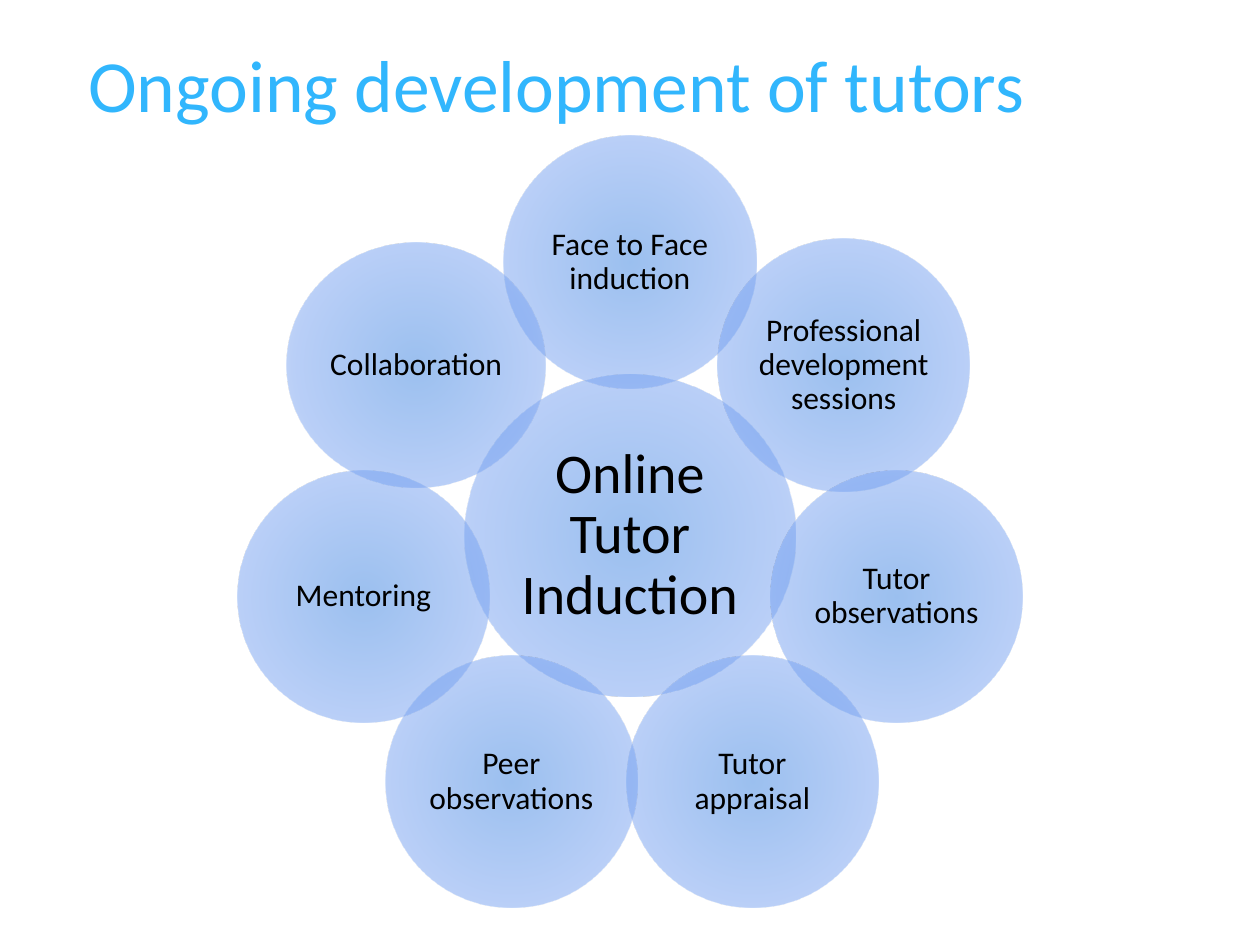
from math import cos, radians, sin

from pptx import Presentation
from pptx.dml.color import RGBColor
from pptx.enum.shapes import MSO_SHAPE
from pptx.enum.text import MSO_ANCHOR, PP_ALIGN
from pptx.oxml import parse_xml
from pptx.oxml.ns import nsdecls
from pptx.util import Inches, Pt

OVAL = MSO_SHAPE.OVAL
LEFT, CENTER = PP_ALIGN.LEFT, PP_ALIGN.CENTER
BOTTOM, MIDDLE = MSO_ANCHOR.BOTTOM, MSO_ANCHOR.MIDDLE

FONT = "Calibri"
GRADIENT = [(0, "3782E1"), (69, "74A1F2"), (100, "B6CAF5")]
OPACITY = 50

HUB_X, HUB_Y = 5, 4.25
RING_RADIUS = 2.17
PETAL_SIZE = (2, 2)
# Clockwise from the top: text, size, sideways shift
PETALS = [
    ("Face to Face induction", PETAL_SIZE, 0),
    ("Professional development sessions", PETAL_SIZE, 0),
    ("Tutor observations", PETAL_SIZE, 0),
    ("Tutor appraisal", PETAL_SIZE, 0.03),
    ("Peer observations", PETAL_SIZE, 0),
    ("Mentoring", PETAL_SIZE, 0),
    ("Collaboration", (2.06, 1.94), 0),
]


def color(hex_text):
    return RGBColor.from_string(hex_text)


def write_text(shape, text, *, size, fill, align, anchor, inset, spacing=None):
    frame = shape.text_frame
    frame.word_wrap = True
    frame.vertical_anchor = anchor
    frame.margin_left = frame.margin_right = Inches(inset)
    frame.margin_top = frame.margin_bottom = Inches(min(inset, 0.05))
    para = frame.paragraphs[0]
    para.alignment = align
    para.line_spacing = spacing
    span = para.add_run()
    span.text = text
    span.font.name = FONT
    span.font.size = Pt(size)
    span.font.color.rgb = color(fill)


def fill_radial(shape):
    """Fill with the translucent gradient that spreads from the centre."""
    stops = "".join(
        f'<a:gs pos="{place * 1000}"><a:srgbClr val="{tint}">'
        f'<a:alpha val="{OPACITY * 1000}"/></a:srgbClr></a:gs>'
        for place, tint in GRADIENT
    )
    gradient = parse_xml(
        f'<a:gradFill {nsdecls("a")} rotWithShape="1"><a:gsLst>{stops}</a:gsLst>'
        '<a:path path="circle"><a:fillToRect l="100000" t="100000" '
        'r="100000" b="100000"/></a:path></a:gradFill>'
    )
    shape.fill.background()
    properties = shape._element.spPr
    properties.replace(properties.find("{*}noFill"), gradient)


def add_circle(page, text, center_x, center_y, size, font_size, inset):
    width, height = size
    circle = page.shapes.add_shape(
        OVAL,
        Inches(center_x - width / 2),
        Inches(center_y - height / 2),
        Inches(width),
        Inches(height),
    )
    circle.shadow.inherit = False
    fill_radial(circle)
    circle.line.fill.background()
    write_text(circle, text, size=font_size, fill="000000", align=CENTER,
               anchor=MIDDLE, inset=inset, spacing=0.9)


def add_title(page, text):
    title = page.shapes.title
    title.left, title.top = Inches(0.6), Inches(0.21)
    title.width, title.height = Inches(8.8), Inches(0.85)
    write_text(title, text, size=42, fill="31B6FD", align=LEFT,
               anchor=BOTTOM, inset=0.1)


def add_petals(page):
    for index, (text, size, shift) in enumerate(PETALS):
        angle = radians(360 / len(PETALS) * index)
        center_x = HUB_X + RING_RADIUS * sin(angle) + shift
        center_y = HUB_Y - RING_RADIUS * cos(angle)
        add_circle(page, text, center_x, center_y, size, 18, 0.02)


def main():
    deck = Presentation()
    deck.slide_width, deck.slide_height = Inches(10), Inches(7.5)
    page = deck.slides.add_slide(deck.slide_layouts[5])
    add_title(page, "Ongoing development of tutors")
    add_circle(page, "Online Tutor Induction", HUB_X, HUB_Y, (2.63, 2.55), 32, 0.04)
    add_petals(page)
    deck.save("out.pptx")


if __name__ == "__main__":
    main()
